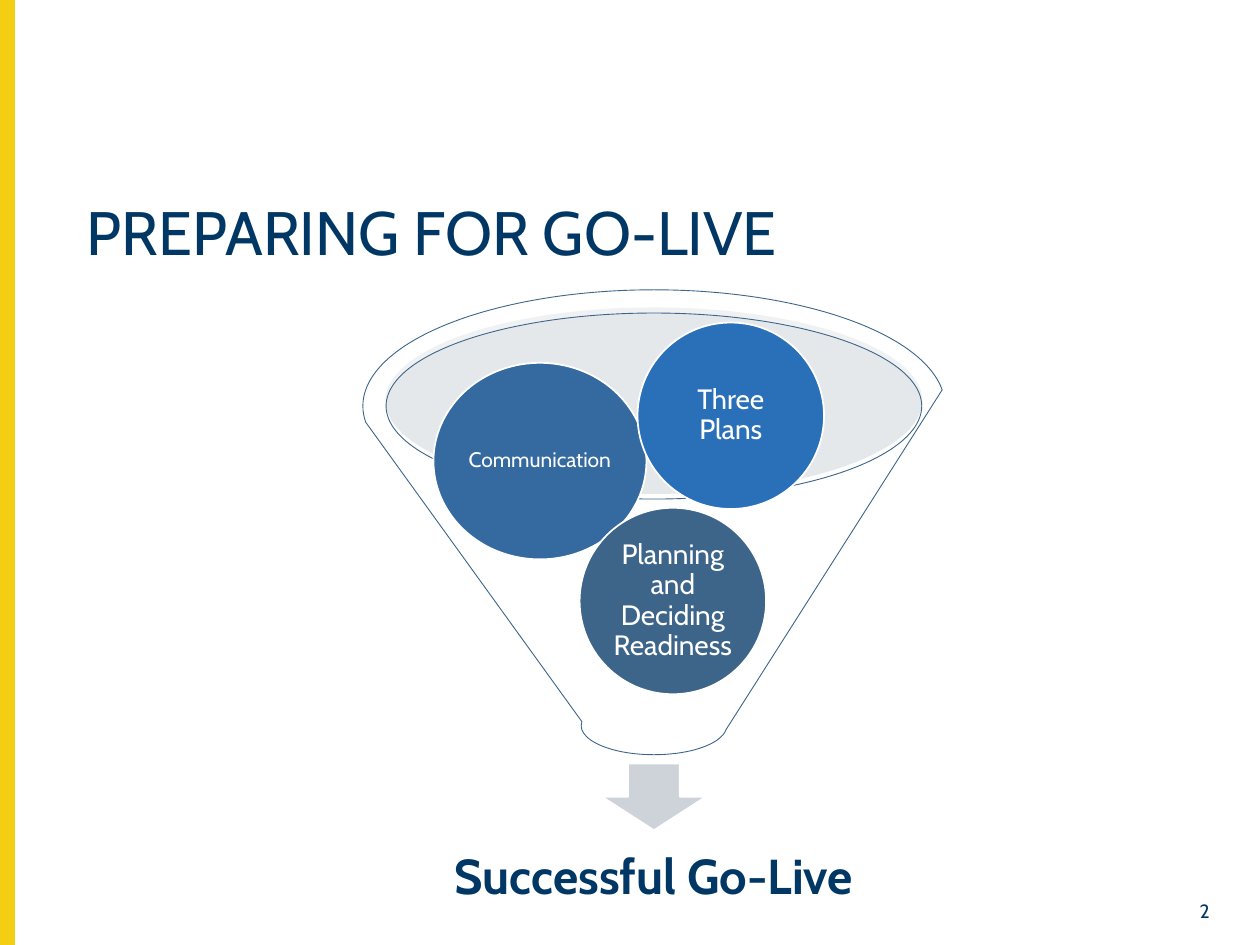
from lxml import etree
from pptx import Presentation
from pptx.dml.color import RGBColor
from pptx.enum import shapes, text
from pptx.oxml import ns
from pptx.util import Inches, Pt

COLORS = {
    "navy": "003764", "yellow": "F4CE12", "white": "FFFFFF",
    "rim": "C0C6CF", "arrow": "CED3DA",
    "steel": "346AA0", "blue": "2A70B8", "slate": "3D6489",
}
SHAPE = shapes.MSO_SHAPE
ALIGN = text.PP_ALIGN
ANCHOR = text.MSO_ANCHOR


class SlideBuilder:
    font = "Cabin"

    def __init__(self, slide):
        self.slide = slide

    def color(self, name):
        return RGBColor.from_string(COLORS[name])

    def shape(self, kind, box, fill, line=None, width=1, opacity=None):
        item = self.slide.shapes.add_shape(kind, *map(Inches, box))
        item.shadow.inherit = False
        item.fill.solid()
        item.fill.fore_color.rgb = self.color(fill)
        if opacity is not None:
            tint = item.element.spPr.find(ns.qn("a:solidFill")).find(ns.qn("a:srgbClr"))
            etree.SubElement(tint, ns.qn("a:alpha"), val=str(opacity * 1000))
        if line:
            item.line.color.rgb = self.color(line)
            item.line.width = Pt(width)
        else:
            item.line.fill.background()
        return item

    def set_text(self, frame, words, size, color, align, anchor, spacing, margins, bold=False):
        frame.word_wrap = True
        frame.vertical_anchor = anchor
        frame.margin_left = frame.margin_right = Inches(margins[0])
        frame.margin_top = frame.margin_bottom = Inches(margins[1])
        paragraph = frame.paragraphs[0]
        paragraph.alignment = align
        paragraph.line_spacing = spacing
        run = paragraph.add_run()
        run.text = words
        run.font.name = self.font
        run.font.size = Pt(size)
        run.font.bold = bold
        run.font.color.rgb = self.color(color)

    def label(self, words, box, size, align=ALIGN.LEFT, anchor=ANCHOR.TOP,
              spacing=0.9, bold=False):
        frame = self.slide.shapes.add_textbox(*map(Inches, box)).text_frame
        self.set_text(frame, words, size, "navy", align, anchor, spacing, (0.1, 0.05), bold)

    def ball(self, words, box, fill, size):
        item = self.shape(SHAPE.OVAL, box, fill, "white")
        self.set_text(item.text_frame, words, size, "white", ALIGN.CENTER,
                      ANCHOR.MIDDLE, 0.9, (0, 0))


def main():
    deck = Presentation()
    deck.slide_width, deck.slide_height = Inches(10), Inches(7.5)
    page = SlideBuilder(deck.slides.add_slide(deck.slide_layouts[6]))

    # Side stripe and title
    page.shape(SHAPE.RECTANGLE, (0, 0, 0.11, 7.5), "yellow", "yellow")
    page.label("PREPARING FOR GO-LIVE", (0.59, 1.56, 9.12, 0.75), 35)

    # Funnel
    page.shape(SHAPE.OVAL, (3.06, 2.44, 4.26, 1.48), "rim", opacity=40)
    page.shape(SHAPE.FUNNEL, (2.88, 2.3, 4.62, 3.69), "white", "slate", 0.5, opacity=40)

    # Balls falling into the funnel
    for words, box, fill, size in (
        ("Communication", (3.44, 2.88, 1.69, 1.56), "steel", 12),
        ("Three Plans", (5.06, 2.56, 1.48, 1.48), "blue", 16),
        ("Planning and Deciding Readiness", (4.6, 4.03, 1.48, 1.48), "slate", 16),
    ):
        page.ball(words, box, fill, size)

    # Outcome
    page.shape(SHAPE.DOWN_ARROW, (4.78, 6.06, 0.82, 0.53), "arrow", "white")
    page.label("Successful Go-Live", (2.4, 6.48, 5.58, 0.99), 28,
               ALIGN.CENTER, ANCHOR.MIDDLE, bold=True)

    # Page number
    page.label("2", (9.19, 7.09, 0.51, 0.26), 11, ALIGN.RIGHT, spacing=1)

    deck.save("out.pptx")


if __name__ == "__main__":
    main()
